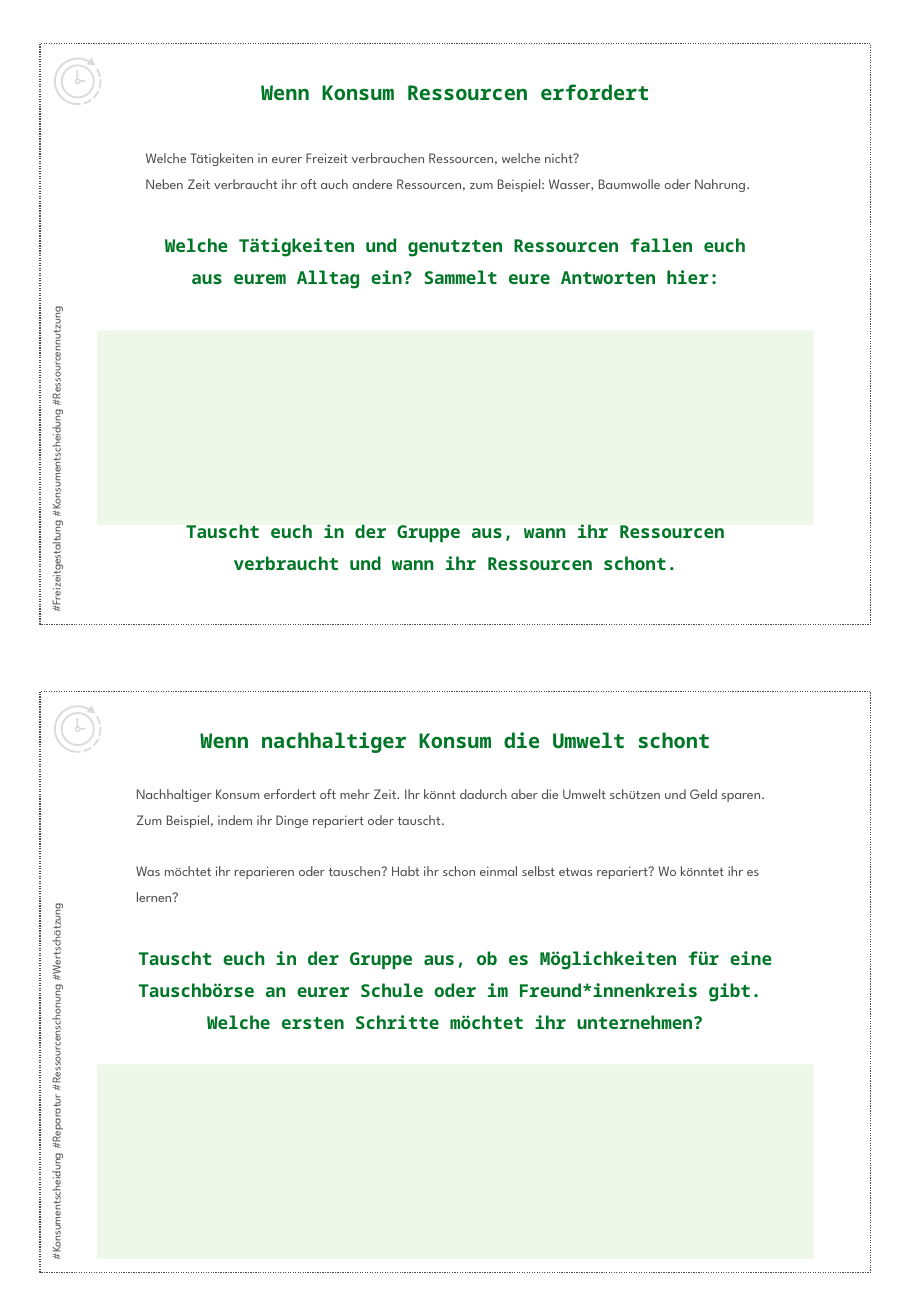
from math import cos, radians, sin

from lxml import etree
from pptx import Presentation
from pptx.dml.color import RGBColor
from pptx.enum.dml import MSO_LINE
from pptx.enum.shapes import MSO_SHAPE
from pptx.enum.text import MSO_ANCHOR, PP_ALIGN
from pptx.oxml.ns import qn
from pptx.util import Inches, Pt

GREEN = RGBColor(0x00, 0x76, 0x26)
GREY = RGBColor(0x4B, 0x4B, 0x4D)
ICON_GREY = RGBColor(0xDB, 0xDB, 0xDC)
PALE_GREEN = RGBColor(0xDE, 0xF2, 0xD4)
RECTANGLE, DONUT = MSO_SHAPE.RECTANGLE, MSO_SHAPE.DONUT
DOTTED = MSO_LINE.ROUND_DOT
LEFT, CENTER = PP_ALIGN.LEFT, PP_ALIGN.CENTER
TOP, MIDDLE = MSO_ANCHOR.TOP, MSO_ANCHOR.MIDDLE
HEADING_FONT, BODY_FONT = "Noto Sans Mono", "League Spartan"

# Role: font, size, colour, bold, alignment
ROLES = {
    "title": (HEADING_FONT, 12, GREEN, True, CENTER),
    "task": (HEADING_FONT, 10.5, GREEN, True, CENTER),
    "body": (BODY_FONT, 8.5, GREY, False, LEFT),
    "tags": (BODY_FONT, 7, GREY, False, LEFT),
}
TITLE_LINE, TASK_LINE, BODY_LINE = 21.5, 18.8, 15.3

CARD_LEFT, CARD_WIDTH, CARD_HEIGHT = 0.33, 6.84, 4.78
TAGS_HEIGHT, TAGS_CENTER = 0.26, 0.46
RING_INNER, RING_OUTER = 0.18, 0.195
RING_ARCS = [(83, 300), (54, 75), (25, 46), (-6, 18), (-33, -12)]

# Each paragraph: role, space before in points, text
CARDS = [
    {
        "top": 0.36, "inset": 0.87, "answer_top": 2.72,
        "tags": "#Freizeitgestaltung #Konsumentscheidung #Ressourcennutzung",
        "paragraphs": [
            ("title", 0, "Wenn Konsum Ressourcen erfordert"),
            ("body", TITLE_LINE, "Welche Tätigkeiten in eurer Freizeit verbrauchen "
             "Ressourcen, welche nicht?"),
            ("body", 0, "Neben Zeit verbraucht ihr oft auch andere Ressourcen, "
             "zum Beispiel: Wasser, Baumwolle oder Nahrung."),
            ("task", TASK_LINE, "Welche Tätigkeiten und genutzten Ressourcen fallen "
             "euch aus eurem Alltag ein? Sammelt eure Antworten hier:"),
            ("task", 7 * TASK_LINE, "Tauscht euch in der Gruppe aus, wann ihr "
             "Ressourcen verbraucht und wann ihr Ressourcen schont."),
        ],
    },
    {
        "top": 5.69, "inset": 0.79, "answer_top": 8.76,
        "tags": "#Konsumentscheidung #Reparatur #Ressourcenschonung #Wertschätzung",
        "paragraphs": [
            ("title", 0, "Wenn nachhaltiger Konsum die Umwelt schont"),
            ("body", 14.4, "Nachhaltiger Konsum erfordert oft mehr Zeit. Ihr könnt "
             "dadurch aber die Umwelt schützen und Geld sparen. Zum Beispiel, "
             "indem ihr Dinge repariert oder tauscht."),
            ("body", BODY_LINE, "Was möchtet ihr reparieren oder tauschen? Habt ihr "
             "schon einmal selbst etwas repariert? Wo könntet ihr es lernen?"),
            ("task", TASK_LINE, "Tauscht euch in der Gruppe aus, ob es Möglichkeiten "
             "für eine Tauschbörse an eurer Schule oder im Freund*innenkreis gibt. "),
            ("task", 0, "Welche ersten Schritte möchtet ihr unternehmen?"),
        ],
    },
]


class Worksheet:
    def __init__(self, slide):
        self.shapes = slide.shapes

    def paint(self, shape, color):
        shape.shadow.inherit = False
        shape.fill.solid()
        shape.fill.fore_color.rgb = color
        shape.line.fill.background()
        return shape

    def block(self, kind, left, top, width, height, color):
        shape = self.shapes.add_shape(
            kind, Inches(left), Inches(top), Inches(width), Inches(height))
        return self.paint(shape, color)

    def outline(self, points, color):
        corners = [(Inches(x), Inches(y)) for x, y in points]
        builder = self.shapes.build_freeform(*corners[0], scale=1.0)
        builder.add_line_segments(corners[1:], close=True)
        return self.paint(builder.convert_to_shape(), color)

    def set_text(self, paragraph, role, text):
        font_name, size, color, bold, alignment = ROLES[role]
        paragraph.text = text
        paragraph.alignment = alignment
        font = paragraph.runs[0].font
        font.name, font.size, font.bold = font_name, Pt(size), bold
        font.color.rgb = color

    def frame(self, top, inset, paragraphs):
        card = self.shapes.add_shape(
            RECTANGLE, Inches(CARD_LEFT), Inches(top),
            Inches(CARD_WIDTH), Inches(CARD_HEIGHT))
        card.shadow.inherit = False
        card.fill.background()
        card.line.color.rgb = GREY
        card.line.width = Pt(0.75)
        card.line.dash_style = DOTTED
        content = card.text_frame
        content.word_wrap = True
        content.vertical_anchor = TOP
        content.margin_left = content.margin_right = Inches(inset)
        content.margin_top = content.margin_bottom = Inches(0.2)
        for index, (role, gap, text) in enumerate(paragraphs):
            paragraph = content.add_paragraph() if index else content.paragraphs[0]
            self.set_text(paragraph, role, text)
            paragraph.line_spacing = 1.5
            paragraph.space_before = Pt(gap)

    def side_tags(self, card_top, text):
        top = card_top + (CARD_HEIGHT - TAGS_HEIGHT) / 2
        tags = self.shapes.add_textbox(
            Inches(TAGS_CENTER - CARD_HEIGHT / 2), Inches(top),
            Inches(CARD_HEIGHT), Inches(TAGS_HEIGHT))
        tags.rotation = 270
        tags.text_frame.word_wrap = True
        tags.text_frame.vertical_anchor = MIDDLE
        self.set_text(tags.text_frame.paragraphs[0], "tags", text)

    def answer_area(self, top):
        area = self.block(RECTANGLE, 0.8, top, 5.9, 1.6, PALE_GREEN)
        color = area.element.spPr.find(".//" + qn("a:srgbClr"))
        etree.SubElement(color, qn("a:alpha")).set("val", "50000")

    def ring(self, x, y, radius, thickness):
        size = 2 * radius
        ring = self.block(DONUT, x - radius, y - radius, size, size, ICON_GREY)
        ring.adjustments[0] = thickness / size

    def arc_band(self, x, y, start, end):
        """Draw a piece of the outer ring, angles clockwise from the right."""
        steps = max(4, (end - start) // 4)
        angles = [radians(start + (end - start) * i / steps) for i in range(steps + 1)]
        edge = [(RING_OUTER, a) for a in angles]
        edge += [(RING_INNER, a) for a in reversed(angles)]
        self.outline([(x + r * cos(a), y + r * sin(a)) for r, a in edge], ICON_GREY)

    def clock(self, x, y):
        self.ring(x, y, 0.14, 0.015)
        self.ring(x, y, 0.025, 0.014)
        self.block(RECTANGLE, x - 0.01, y - 0.09, 0.015, 0.07, ICON_GREY)
        self.block(RECTANGLE, x + 0.02, y - 0.01, 0.045, 0.015, ICON_GREY)
        for start, end in RING_ARCS:
            self.arc_band(x, y, start, end)
        arrowhead = [(0.075, -0.14), (0.145, -0.13), (0.115, -0.195)]
        self.outline([(x + dx, y + dy) for dx, dy in arrowhead], ICON_GREY)


def main():
    deck = Presentation()
    deck.slide_width, deck.slide_height = Inches(7.5), Inches(10.83)
    sheet = Worksheet(deck.slides.add_slide(deck.slide_layouts[6]))
    for card in CARDS:
        sheet.frame(card["top"], card["inset"], card["paragraphs"])
        sheet.side_tags(card["top"], card["tags"])
        sheet.answer_area(card["answer_top"])
        sheet.clock(CARD_LEFT + 0.31, card["top"] + 0.31)
    deck.save("out.pptx")


if __name__ == "__main__":
    main()
